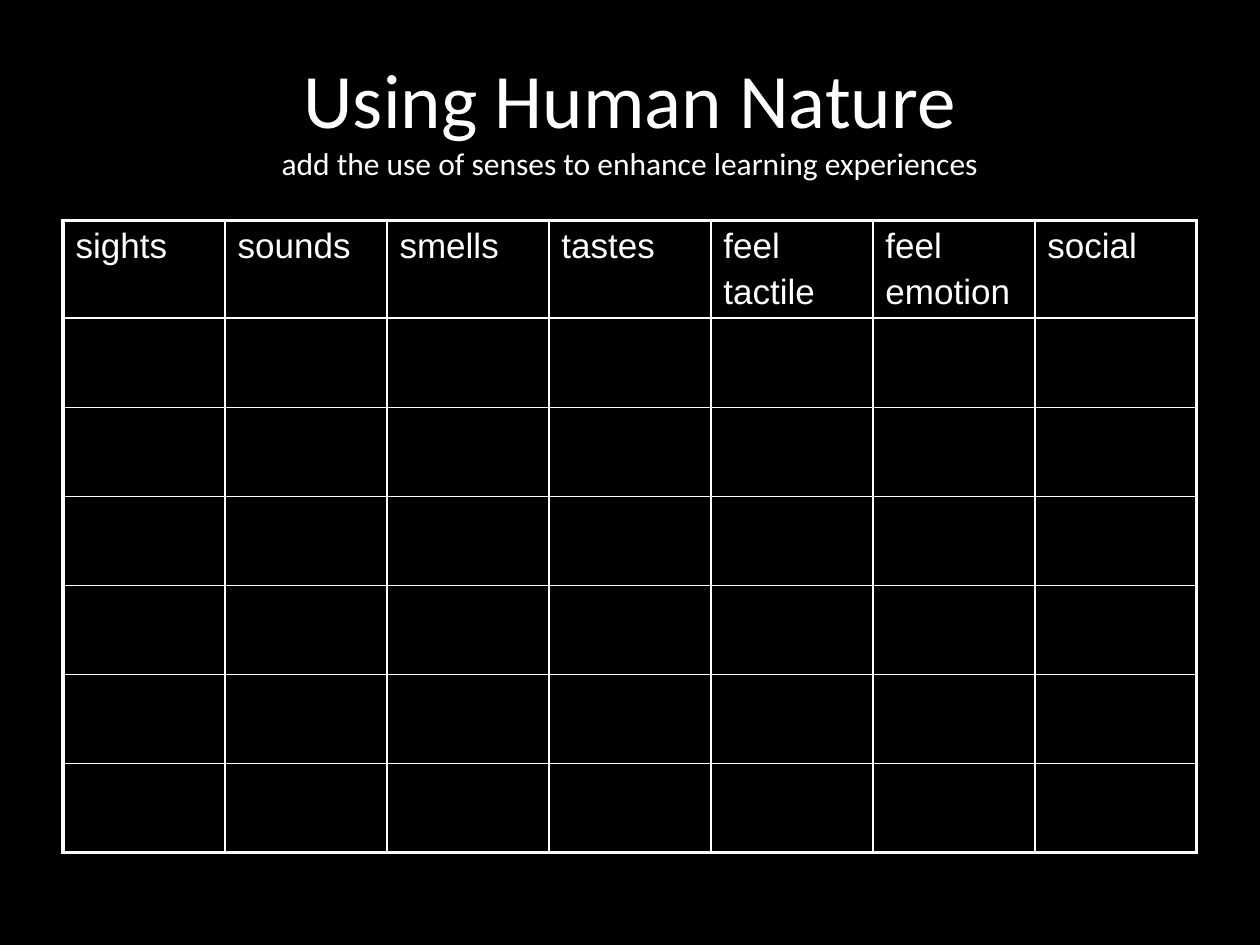
"""Build a slide with a blank planning table for using the senses in learning."""
from lxml import etree
from pptx import Presentation, util as u
from pptx.dml.color import RGBColor
from pptx.enum import text
from pptx.oxml import ns

HUES = {"back": "000000", "ink": "FFFFFF"}
HEADS = [["sights"], ["sounds"], ["smells"], ["tastes"],
         ["feel", "tactile"], ["feel", "emotion"], ["social"]]
LINES = [("Using Human Nature", 44),
         ("add the use of senses to enhance learning experiences", 18)]
ROWS = 7
THIN, THICK = 1, 2.25


def put(obj, vals):
    for key, val in vals.items():
        setattr(obj, key, val)


def sub(node, tag, **vals):
    return etree.SubElement(node, ns.qn(tag), **vals)


class Deck:
    def __init__(self, wide, high):
        self.prs = Presentation()
        put(self.prs, {"slide_width": u.Inches(wide), "slide_height": u.Inches(high)})
        self.slide = self.prs.slides.add_slide(self.prs.slide_layouts[5])
        fill = self.slide.background.fill
        fill.solid()
        fill.fore_color.rgb = RGBColor.from_string(HUES["back"])

    def box(self, left, top, wide, high):
        w, h = self.prs.slide_width, self.prs.slide_height
        vals = (left * w, top * h, wide * w, high * h)
        return dict(zip(("left", "top", "width", "height"), map(round, vals)))

    def run(self, para, words, size, face):
        run = para.add_run()
        run.text = words
        put(run.font, {"size": u.Pt(size), "name": face})
        run.font.color.rgb = RGBColor.from_string(HUES["ink"])

    def title(self, lines, *area):
        shape = self.slide.shapes.title
        put(shape, self.box(*area))
        put(shape.text_frame, {"word_wrap": True,
                               "auto_size": text.MSO_AUTO_SIZE.NONE,
                               "vertical_anchor": text.MSO_ANCHOR.MIDDLE})
        para = shape.text_frame.paragraphs[0]
        para.alignment = text.PP_ALIGN.CENTER
        for i, (words, size) in enumerate(lines):
            if i:
                para.add_line_break()
            self.run(para, words, size, "Calibri")

    def edge(self, cell, side, size):
        line = sub(cell._tc.get_or_add_tcPr(), "a:ln" + side, w=str(u.Pt(size)))
        sub(sub(line, "a:solidFill"), "a:srgbClr", val=HUES["ink"])

    def label(self, cell, parts):
        frame = cell.text_frame
        for i, words in enumerate(parts):
            para = frame.add_paragraph() if i else frame.paragraphs[0]
            gap = sub(para._p.get_or_add_pPr(), "a:spcBef")
            sub(gap, "a:spcPct", val="20000")
            self.run(para, words, 20, "Arial")

    def table(self, heads, rows, *area):
        cols = len(heads)
        grid = self.slide.shapes.add_table(rows, cols, **self.box(*area)).table
        put(grid, {"first_row": False, "horz_banding": False})
        for r in range(rows):
            for c in range(cols):
                cell = grid.cell(r, c)
                outer = {"L": c == 0, "R": c == cols - 1,
                         "T": r == 0, "B": r == rows - 1}
                for side, rim in outer.items():
                    self.edge(cell, side, THICK if rim else THIN)
                cell.fill.background()
                if r == 0:
                    self.label(cell, heads[c])


def main():
    deck = Deck(10, 7.5)
    deck.title(LINES, 0.05, 0.04, 0.9, 1 / 6)
    deck.table(HEADS, ROWS, 0.05, 7 / 30, 0.9, 0.66)
    deck.prs.save("out.pptx")


if __name__ == "__main__":
    main()
